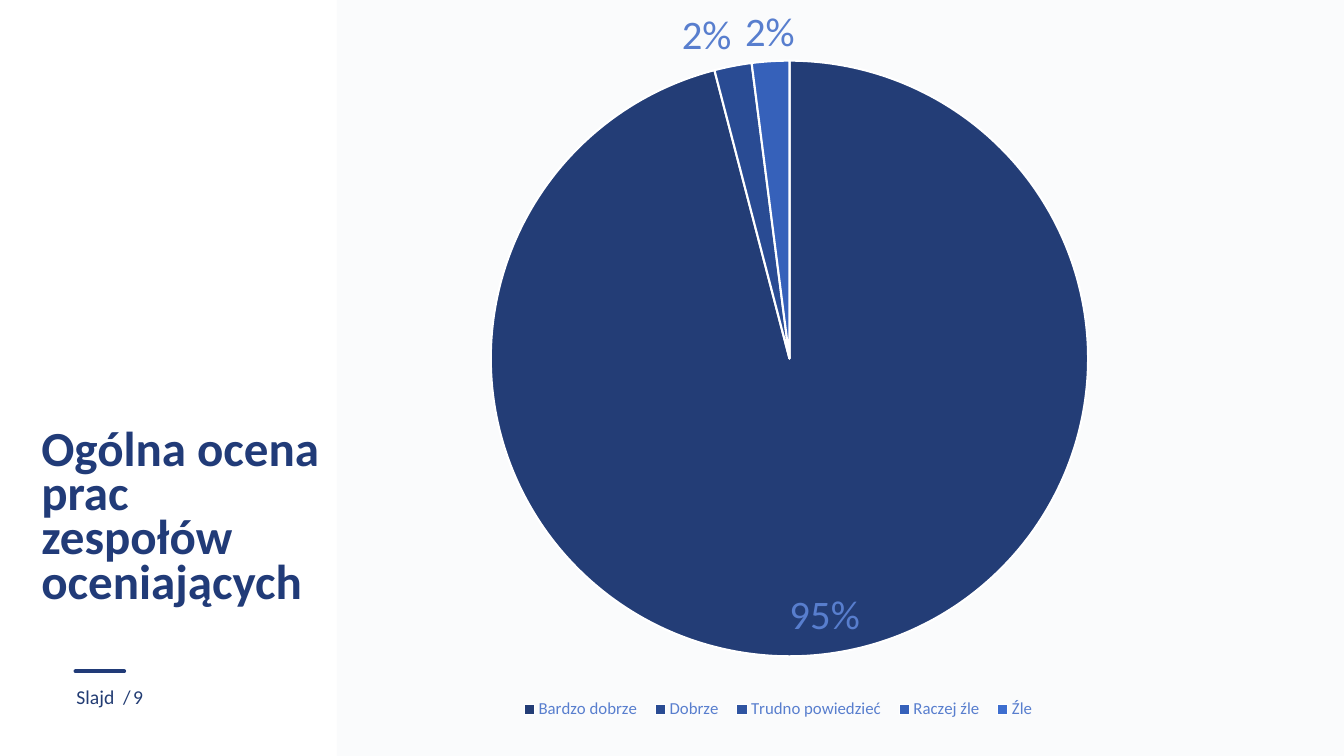
from dataclasses import dataclass

from lxml.etree import SubElement
from pptx import Presentation
from pptx.chart.data import CategoryChartData
from pptx.dml.color import RGBColor
from pptx.enum.chart import XL_CHART_TYPE, XL_LABEL_POSITION, XL_LEGEND_POSITION
from pptx.enum.shapes import MSO_CONNECTOR, MSO_SHAPE
from pptx.enum.text import MSO_ANCHOR, PP_ALIGN
from pptx.oxml import parse_xml
from pptx.oxml.ns import nsdecls, qn
from pptx.util import Inches, Pt


@dataclass(frozen=True)
class Theme:
    font: str = "Calibri"
    title: str = "213B78"
    panel: str = "223C73"
    label: str = "587ECE"
    white: str = "FFFFFF"
    slices: tuple = ("233D76", "294B93", "2F54A1", "3661BA", "3D6ECF")
    title_size: int = 35
    footer_size: int = 14
    legend_size: int = 12
    label_size: int = 29


T = Theme()
RATINGS = {
    "Bardzo dobrze": 95,
    "Dobrze": 2,
    "Trudno powiedzieć": None,
    "Raczej źle": 2,
    "Źle": None,
}


def rgb(value):
    return RGBColor.from_string(value)


def style(font, size, color, bold=False):
    font.name = T.font
    font.size = Pt(size)
    font.bold = bold
    font.color.rgb = rgb(color)


def add_panel(s, x, y, w, h):
    sp = s.shapes.add_shape(MSO_SHAPE.RECTANGLE, Inches(x), Inches(y), Inches(w), Inches(h))
    sp.shadow.inherit = False
    sp.fill.solid()
    sp.fill.fore_color.rgb = rgb(T.panel)
    sp.line.fill.background()
    color = sp._element.spPr.find(qn("a:solidFill"))[0]
    SubElement(color, qn("a:alpha")).set("val", "2000")


def add_title(s, text, x, y, w, h):
    sp = s.shapes.title
    sp.left, sp.top, sp.width, sp.height = Inches(x), Inches(y), Inches(w), Inches(h)
    tf = sp.text_frame
    tf.text = text
    tf.word_wrap = True
    tf.vertical_anchor = MSO_ANCHOR.TOP
    p = tf.paragraphs[0]
    p.alignment = PP_ALIGN.LEFT
    p.line_spacing = 0.75
    style(p.runs[0].font, T.title_size, T.title, True)


def add_label(s, text, x, y, w, h, inset):
    tf = s.shapes.add_textbox(Inches(x), Inches(y), Inches(w), Inches(h)).text_frame
    tf.text = text
    tf.word_wrap = False
    tf.vertical_anchor = MSO_ANCHOR.MIDDLE
    tf.margin_left = tf.margin_right = Inches(inset)
    style(tf.paragraphs[0].runs[0].font, T.footer_size, T.panel)


def add_footer(s, number, x, y):
    rule = s.shapes.add_connector(
        MSO_CONNECTOR.STRAIGHT, Inches(x + 0.09), Inches(y), Inches(x + 0.57), Inches(y)
    )
    rule.line.color.rgb = rgb(T.title)
    rule.line.width = Pt(3)
    props = rule._element.spPr
    props.find(qn("a:ln")).set("cap", "rnd")
    SubElement(props, qn("a:effectLst"))
    add_label(s, "Slajd  /", x, y + 0.08, 0.75, 0.34, 0.1)
    add_label(s, number, x + 0.53, y + 0.07, 0.71, 0.36, 0.13)


def set_layout(element, position, x, y, w, h, target=""):
    for old in element.findall(qn("c:layout")):
        element.remove(old)
    element.insert(position, parse_xml(
        f'<c:layout {nsdecls("c")}><c:manualLayout>{target}'
        '<c:xMode val="edge"/><c:yMode val="edge"/>'
        f'<c:x val="{x}"/><c:y val="{y}"/><c:w val="{w}"/><c:h val="{h}"/>'
        '</c:manualLayout></c:layout>'
    ))


def add_rating_chart(s, x, y, w, h):
    data = CategoryChartData()
    data.categories = list(RATINGS)
    data.add_series("Series 1", list(RATINGS.values()))
    chart = s.shapes.add_chart(
        XL_CHART_TYPE.PIE, Inches(x), Inches(y), Inches(w), Inches(h), data
    ).chart
    chart.has_title = False
    style(chart.font, 10, T.label)
    chart.has_legend = True
    chart.legend.position = XL_LEGEND_POSITION.BOTTOM
    chart.legend.include_in_layout = False
    style(chart.legend.font, T.legend_size, T.label)

    plot = chart.plots[0]
    plot.vary_by_categories = True
    for i, color in enumerate(T.slices):
        fmt = plot.series[0].points[i].format
        fmt.fill.solid()
        fmt.fill.fore_color.rgb = rgb(color)
        fmt.line.color.rgb = rgb(T.white)
        fmt.line.width = Pt(1.5)

    plot.has_data_labels = True
    labels = plot.data_labels
    labels.show_value = True
    labels.number_format = '0"%"'
    labels.number_format_is_linked = False
    labels.position = XL_LABEL_POSITION.BEST_FIT
    style(labels.font, T.label_size, T.label)

    inner = '<c:layoutTarget val="inner"/>'
    root = chart._chartSpace.chart
    set_layout(root.plotArea, 0, 0.23, 0.07, 0.54, 0.79, inner)
    set_layout(root.find(qn("c:legend")), 1, 0.25, 0.91, 0.48, 0.04)


def build_rating_slide(prs):
    s = prs.slides.add_slide(prs.slide_layouts[5])
    add_panel(s, 3.34, 0, 9.99, 7.5)
    add_footer(s, "9", 0.66, 6.66)
    add_title(s, "Ogólna ocena prac zespołów oceniających", 0.31, 4.23, 3.04, 1.99)
    add_rating_chart(s, 2.32, 0.06, 11.02, 7.5)


def main():
    prs = Presentation()
    prs.slide_width, prs.slide_height = Inches(13.33), Inches(7.5)
    build_rating_slide(prs)
    prs.save("out.pptx")


if __name__ == "__main__":
    main()
